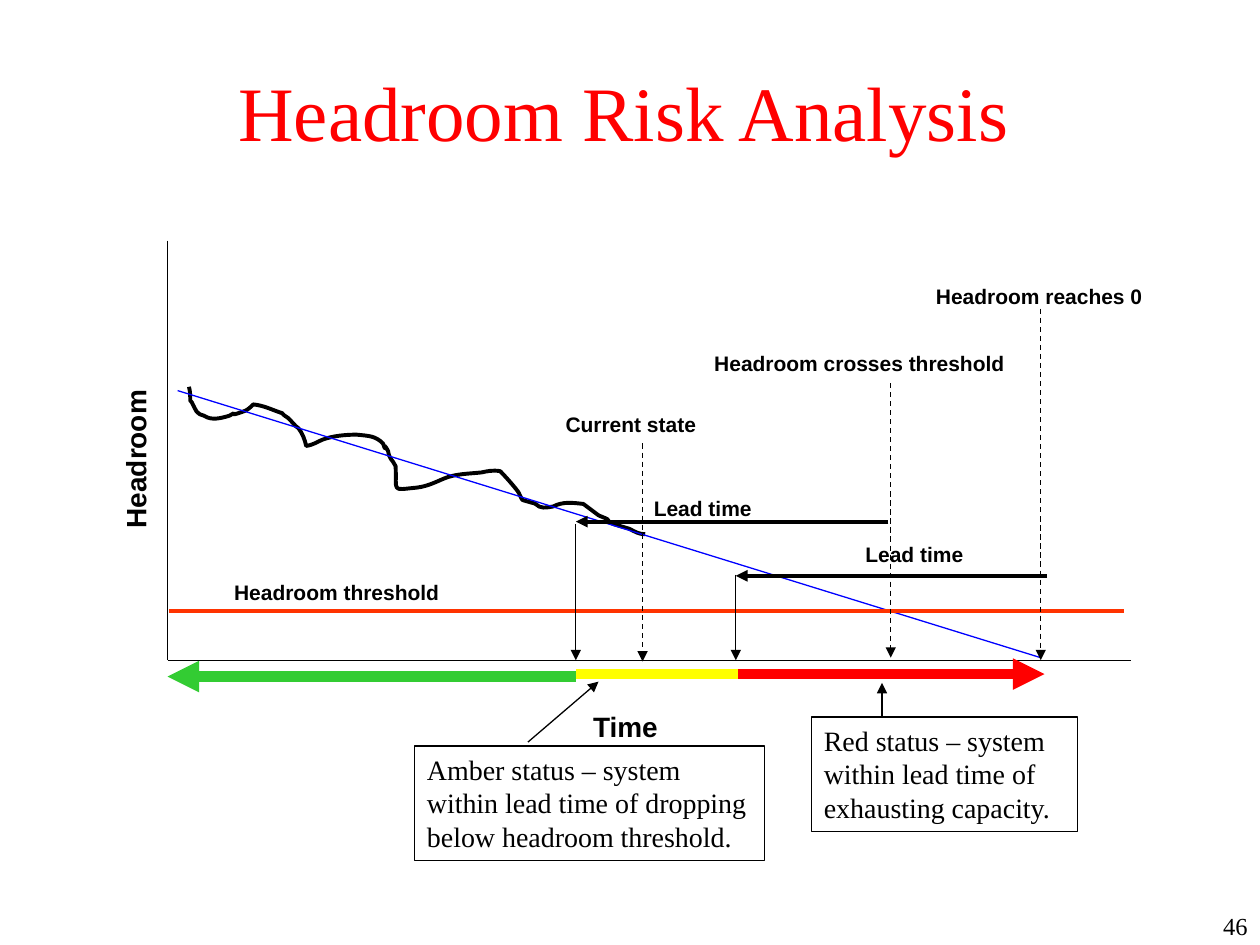
from lxml import etree
from pptx import Presentation
from pptx.dml.color import RGBColor
from pptx.enum.dml import MSO_LINE
from pptx.enum.shapes import MSO_CONNECTOR, MSO_SHAPE
from pptx.enum.text import MSO_ANCHOR, PP_ALIGN
from pptx.oxml.ns import qn
from pptx.util import Inches, Pt

STRAIGHT = MSO_CONNECTOR.STRAIGHT
RECTANGLE = MSO_SHAPE.RECTANGLE
DASH = MSO_LINE.DASH
LEFT, CENTER, RIGHT = PP_ALIGN.LEFT, PP_ALIGN.CENTER, PP_ALIGN.RIGHT
TOP, MIDDLE = MSO_ANCHOR.TOP, MSO_ANCHOR.MIDDLE

SANS, SERIF = "Arial", "Times New Roman"
COLORS = {
    "ink": "000000", "title": "FF0000", "trend": "0000FF", "threshold": "FF3300",
    "green": "33CC33", "amber": "FFFF00", "red": "FF0000",
}

# Time axis and the moments marked on it
AXIS_X, AXIS_Y = 1.33, 5.24
AMBER_START, NOW, RED_START, CROSSING, ZERO = 4.57, 5.1, 5.84, 7.07, 8.26

# Measured headroom: start point, then two control points and an end per curve
HEADROOM_START = (1.5, 3.07)
HEADROOM_CURVES = [
    (1.51, 3.11, 1.51, 3.14, 1.51, 3.18), (1.52, 3.19, 1.53, 3.2, 1.53, 3.21),
    (1.56, 3.26, 1.55, 3.28, 1.62, 3.3), (1.68, 3.34, 1.75, 3.32, 1.82, 3.3),
    (1.91, 3.25, 1.78, 3.32, 1.92, 3.27), (1.96, 3.26, 1.98, 3.24, 2.01, 3.21),
    (2.1, 3.22, 2.15, 3.25, 2.24, 3.28), (2.29, 3.33, 2.22, 3.27, 2.29, 3.32),
    (2.32, 3.35, 2.34, 3.38, 2.37, 3.4), (2.4, 3.44, 2.42, 3.49, 2.43, 3.54),
    (2.49, 3.53, 2.51, 3.51, 2.56, 3.49), (2.64, 3.46, 2.74, 3.45, 2.83, 3.45),
    (2.93, 3.46, 2.98, 3.46, 3.04, 3.52), (3.08, 3.63, 3.02, 3.47, 3.08, 3.58),
    (3.09, 3.6, 3.08, 3.62, 3.1, 3.64), (3.13, 3.68, 3.11, 3.65, 3.14, 3.7),
    (3.15, 3.91, 3.1, 3.89, 3.31, 3.87), (3.39, 3.86, 3.45, 3.83, 3.52, 3.8),
    (3.61, 3.76, 3.73, 3.76, 3.82, 3.75), (3.87, 3.74, 3.91, 3.73, 3.97, 3.74),
    (4.01, 3.78, 4.08, 3.86, 4.11, 3.9), (4.12, 3.91, 4.14, 3.97, 4.15, 3.97),
    (4.17, 3.98, 4.2, 3.98, 4.22, 3.99), (4.23, 3.99, 4.25, 4, 4.25, 4),
    (4.29, 4.04, 4.33, 4.03, 4.39, 4.02), (4.47, 3.98, 4.54, 3.99, 4.63, 4),
    (4.67, 4.03, 4.71, 4.06, 4.75, 4.09), (4.77, 4.1, 4.8, 4.11, 4.82, 4.12),
    (4.83, 4.14, 4.84, 4.15, 4.87, 4.16), (4.9, 4.17, 4.94, 4.18, 4.97, 4.19),
    (4.98, 4.19, 5, 4.2, 5, 4.2), (5.04, 4.22, 5.07, 4.24, 5.12, 4.24),
]


def rgb(name):
    return RGBColor.from_string(COLORS[name])


def write(shape, text, size, font=SANS, bold=False, color="ink", align=LEFT, anchor=TOP):
    frame = shape.text_frame
    frame.text = text
    frame.word_wrap = True
    frame.vertical_anchor = anchor
    paragraph = frame.paragraphs[0]
    paragraph.alignment = align
    paragraph.font.name = font
    paragraph.font.size = Pt(size)
    paragraph.font.bold = bold
    paragraph.font.color.rgb = rgb(color)


def place(shape, *box):
    shape.left, shape.top, shape.width, shape.height = map(Inches, box)


def add_label(slide, text, box, size=12, rotation=0, **style):
    label = slide.shapes.add_textbox(*map(Inches, box))
    label.rotation = rotation
    write(label, text, size, **style)


def add_line(slide, start, end, color="ink", width=0.75, arrow=False, dashed=False):
    line = slide.shapes.add_connector(STRAIGHT, *map(Inches, start + end))
    line.line.color.rgb = rgb(color)
    line.line.width = Pt(width)
    if dashed:
        line.line.dash_style = DASH
    if arrow:
        etree.SubElement(line.line._get_or_add_ln(), qn("a:tailEnd"), type="triangle")
    etree.SubElement(line._element.spPr, qn("a:effectLst"))


def add_note(slide, text, box):
    note = slide.shapes.add_shape(RECTANGLE, *map(Inches, box))
    note.shadow.inherit = False
    note.fill.background()
    note.line.color.rgb = rgb("ink")
    note.line.width = Pt(0.75)
    write(note, text, 16, font=SERIF)


def add_curve(slide, start, curves, width):
    points = [(Inches(x), Inches(y)) for c in curves for x, y in zip(c[::2], c[1::2])]
    builder = slide.shapes.build_freeform(*map(Inches, start))
    builder.add_line_segments(points, close=False)
    curve = builder.convert_to_shape()
    curve.shadow.inherit = False
    curve.fill.background()
    curve.line.color.rgb = rgb("ink")
    curve.line.width = Pt(width)
    # Turn each run of three straight segments into one cubic curve
    segments = list(curve._element.iter(qn("a:lnTo")))
    for i in range(0, len(segments), 3):
        cubic = etree.Element(qn("a:cubicBezTo"))
        segments[i].addprevious(cubic)
        for segment in segments[i:i + 3]:
            cubic.append(segment[0])
            segment.getparent().remove(segment)


def main():
    prs = Presentation()
    prs.slide_width, prs.slide_height = Inches(10), Inches(7.5)
    slide = prs.slides.add_slide(prs.slide_layouts[5])

    # Title and page number
    title = slide.shapes.title
    place(title, 1.42, 0.25, 7.06, 1.25)
    write(title, "Headroom Risk Analysis", 44, font=SERIF, color="title",
          align=CENTER, anchor=MIDDLE)
    add_label(slide, "46", (7.92, 7.18, 2.08, 0.32), 14, font=SERIF, align=RIGHT)

    # Axes
    add_line(slide, (AXIS_X, 1.91), (AXIS_X, AXIS_Y))
    add_line(slide, (AXIS_X, AXIS_Y), (8.98, AXIS_Y))
    add_label(slide, "Time", (4.61, 5.58, 0.73, 0.37), 16, bold=True)
    add_label(slide, "Headroom", (0.35, 3.38, 1.45, 0.37), 16, rotation=270, bold=True)

    # Measured headroom, its trend and the threshold
    add_curve(slide, HEADROOM_START, HEADROOM_CURVES, 2.25)
    add_line(slide, (1.41, 3.1), (ZERO, 5.22), "trend")
    add_line(slide, (1.34, 4.85), (8.92, 4.85), "threshold", 2.25)

    # Status bands below the time axis
    add_line(slide, (AMBER_START, 5.37), (AXIS_X, 5.37), "green", 6, arrow=True)
    add_line(slide, (AMBER_START, 5.35), (7.08, 5.35), "amber", 6)
    add_line(slide, (5.86, 5.35), (8.29, 5.35), "red", 6, arrow=True)

    # Dashed markers for key moments
    for x, top, bottom in [(CROSSING, 3.04, 5.22), (ZERO, 2.45, AXIS_Y), (NOW, 3.52, 5.25)]:
        add_line(slide, (x, top), (x, bottom), arrow=True, dashed=True)

    # Lead times, each dropping to the axis where its status begins
    for x, end, y, drop in [(AMBER_START, 7.05, 4.14, 4.16), (RED_START, 8.31, 4.57, 4.56)]:
        add_line(slide, (end, y), (x, y), width=2.25, arrow=True)
        add_line(slide, (x, drop), (x, AXIS_Y), arrow=True)

    # Chart labels
    for text, left, top, width in [
        ("Headroom threshold", 1.76, 4.55, 2.17),
        ("Headroom crosses threshold", 5.57, 2.73, 2.59),
        ("Headroom reaches 0", 7.33, 2.2, 1.89),
        ("Current state", 4.39, 3.22, 1.37),
        ("Lead time", 5.09, 3.88, 1.19),
        ("Lead time", 6.77, 4.25, 1.17),
    ]:
        add_label(slide, text, (left, top, width, 0.3), bold=True)

    # Status notes with pointers
    add_note(slide, "Amber status – system within lead time of dropping below headroom threshold.",
             (3.29, 5.92, 2.78, 0.91))
    add_line(slide, (4.19, 5.89), (4.75, 5.41), arrow=True)
    add_note(slide, "Red status – system within lead time of exhausting capacity.",
             (6.44, 5.69, 2.11, 0.91))
    add_line(slide, (7, 5.68), (7, 5.42), arrow=True)

    prs.save("out.pptx")


if __name__ == "__main__":
    main()
